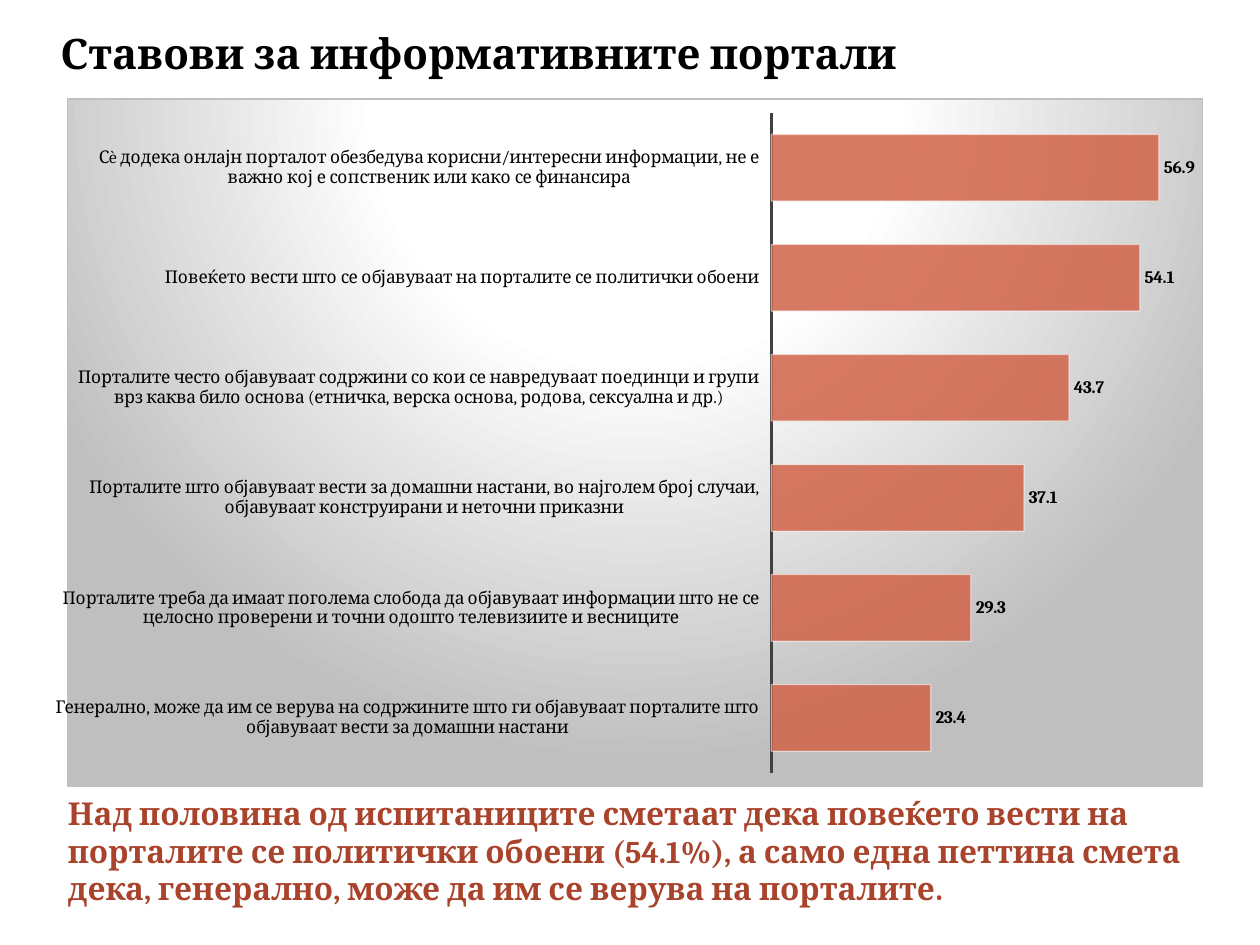
from dataclasses import dataclass

from lxml.etree import SubElement
from pptx import Presentation
from pptx.chart.data import CategoryChartData
from pptx.dml.color import RGBColor
from pptx.enum.chart import XL_CHART_TYPE as ChartType
from pptx.enum.chart import XL_LABEL_POSITION as LabelPos
from pptx.enum.chart import XL_TICK_LABEL_POSITION as TickLabelPos
from pptx.enum.chart import XL_TICK_MARK as TickMark
from pptx.enum.text import MSO_ANCHOR as Anchor
from pptx.oxml import parse_xml
from pptx.oxml.ns import nsdecls, qn
from pptx.util import Pt


@dataclass(frozen=True)
class Theme:
    font: str = "Cambria"
    text: str = "000000"
    accent: str = "A9432B"
    bar: str = "D16349"
    white: str = "FFFFFF"
    grey: str = "BFBFBF"
    axis: str = "404040"
    title_size: float = 24
    note_size: float = 18
    chart_size: float = 10


@dataclass(frozen=True)
class Box:
    left: float
    top: float
    width: float
    height: float

    def lengths(self) -> tuple:
        return Pt(self.left), Pt(self.top), Pt(self.width), Pt(self.height)


@dataclass(frozen=True)
class TextBlock:
    box: Box
    text: str
    size: float
    color: str


@dataclass(frozen=True)
class Opinion:
    statement: str
    share: float


THEME = Theme()

TEXTS = [
    TextBlock(Box(27.4, 0, 687, 60), "Ставови за информативните портали",
              THEME.title_size, THEME.text),
    TextBlock(Box(31.7, 450, 682.6, 72),
              "Над половина од испитаниците сметаат дека повеќето вести на "
              "порталите се политички обоени (54.1%), а само една петтина смета "
              "дека, генерално, може да им се верува на порталите.",
              THEME.note_size, THEME.accent),
]

# Listed from the bottom bar to the top bar
OPINIONS = [
    Opinion("Генерално, може да им се верува на содржините што ги објавуваат "
            "порталите што објавуваат вести за домашни настани", 23.4),
    Opinion("Порталите треба да имаат поголема слобода да објавуваат информации "
            "што не се целосно проверени и точни одошто телевизиите и весниците", 29.3),
    Opinion("Порталите што објавуваат вести за домашни настани, во најголем број "
            "случаи, објавуваат конструирани и неточни приказни", 37.1),
    Opinion("Порталите често објавуваат содржини со кои се навредуваат поединци и "
            "групи врз каква било основа (етничка, верска основа, родова, "
            "сексуална и др.)", 43.7),
    Opinion("Повеќето вести што се објавуваат на порталите се политички обоени", 54.1),
    Opinion("Сè додека онлајн порталот обезбедува корисни/интересни информации, "
            "не е важно кој е сопственик или како се финансира", 56.9),
]

CHART_BOX = Box(31.7, 56.2, 656, 393.8)
PLOT_SHARE = {"x": 0.62, "y": 0.02, "w": 0.36, "h": 0.96}


def apply(target, values: dict) -> None:
    for name, value in values.items():
        setattr(target, name, value)


def set_font(font, size: float, color: str, bold: bool = False) -> None:
    apply(font, {"name": THEME.font, "size": Pt(size), "bold": bold})
    font.color.rgb = RGBColor.from_string(color)


def add_text(slide, block: TextBlock) -> None:
    tf = slide.shapes.add_textbox(*block.box.lengths()).text_frame
    apply(tf, {"word_wrap": True, "vertical_anchor": Anchor.MIDDLE})
    r = tf.paragraphs[0].add_run()
    r.text = block.text
    set_font(r.font, block.size, block.color, bold=True)


def place_plot(chart) -> None:
    """Fix the inner plot area as shares of the chart."""
    area = chart._chartSpace.chart.plotArea
    for old in area.findall(qn("c:layout")):
        area.remove(old)
    layout = parse_xml(f"<c:layout {nsdecls('c')}/>")
    manual = SubElement(layout, qn("c:manualLayout"))
    settings = {"layoutTarget": "inner", "xMode": "edge", "yMode": "edge", **PLOT_SHARE}
    for tag, value in settings.items():
        SubElement(manual, qn(f"c:{tag}")).set("val", str(value))
    area.insert(0, layout)


def fill_background(chart) -> None:
    """Give the chart a circular gradient centred above it, and a thin border."""
    stops = [(0, THEME.white), (39, THEME.white), (100, THEME.grey)]
    gs = "".join(f'<a:gs pos="{pos * 1000}"><a:srgbClr val="{color}"/></a:gs>'
                 for pos, color in stops)
    chart._chartSpace.chart.addnext(parse_xml(
        f'<c:spPr {nsdecls("c", "a")}><a:gradFill><a:gsLst>{gs}</a:gsLst>'
        '<a:path path="circle">'
        '<a:fillToRect l="50000" t="-80000" r="50000" b="180000"/></a:path></a:gradFill>'
        f'<a:ln w="{Pt(0.75)}"><a:solidFill><a:srgbClr val="{THEME.grey}"/></a:solidFill>'
        '</a:ln></c:spPr>'))


def style_bars(series) -> None:
    fill, line = series.format.fill, series.format.line
    fill.solid()
    fill.fore_color.rgb = RGBColor.from_string(THEME.bar)
    line.width = Pt(0.75)
    line.color.rgb = RGBColor.from_string(THEME.white)
    # Opacity of the fill, then of the outline
    colors = series._element.xpath("c:spPr//a:srgbClr")
    for color, percent in zip(colors, (85, 50)):
        SubElement(color, qn("a:alpha")).set("val", str(percent * 1000))


def add_opinion_chart(slide, opinions: list[Opinion]) -> None:
    data = CategoryChartData(number_format="0.0")
    data.categories = [o.statement for o in opinions]
    data.add_series("Series 1", [o.share for o in opinions])
    chart = slide.shapes.add_chart(
        ChartType.BAR_CLUSTERED, *CHART_BOX.lengths(), data).chart
    apply(chart, {"has_title": False, "has_legend": False})
    set_font(chart.font, THEME.chart_size, THEME.text)

    # Axes
    no_ticks = {"major_tick_mark": TickMark.NONE, "minor_tick_mark": TickMark.NONE,
                "has_major_gridlines": False}
    cat, val = chart.category_axis, chart.value_axis
    apply(cat, {**no_ticks, "tick_label_position": TickLabelPos.LOW})
    apply(val, {**no_ticks, "minimum_scale": 0, "maximum_scale": 60, "visible": False})
    set_font(cat.tick_labels.font, THEME.chart_size, THEME.text)
    cat.format.line.width = Pt(1.5)
    cat.format.line.color.rgb = RGBColor.from_string(THEME.axis)

    # Bars and their values
    plot = chart.plots[0]
    apply(plot, {"gap_width": 65, "vary_by_categories": False})
    style_bars(plot.series[0])
    labels = plot.series[0].data_labels
    apply(labels, {"show_value": True, "position": LabelPos.OUTSIDE_END,
                   "number_format": "0.0", "number_format_is_linked": False})
    set_font(labels.font, THEME.chart_size, THEME.text, bold=True)

    place_plot(chart)
    fill_background(chart)


def main() -> None:
    prs = Presentation()
    apply(prs, {"slide_width": Pt(720), "slide_height": Pt(540)})
    s = prs.slides.add_slide(prs.slide_layouts[6])
    for block in TEXTS:
        add_text(s, block)
    add_opinion_chart(s, OPINIONS)
    prs.save("out.pptx")


if __name__ == "__main__":
    main()
